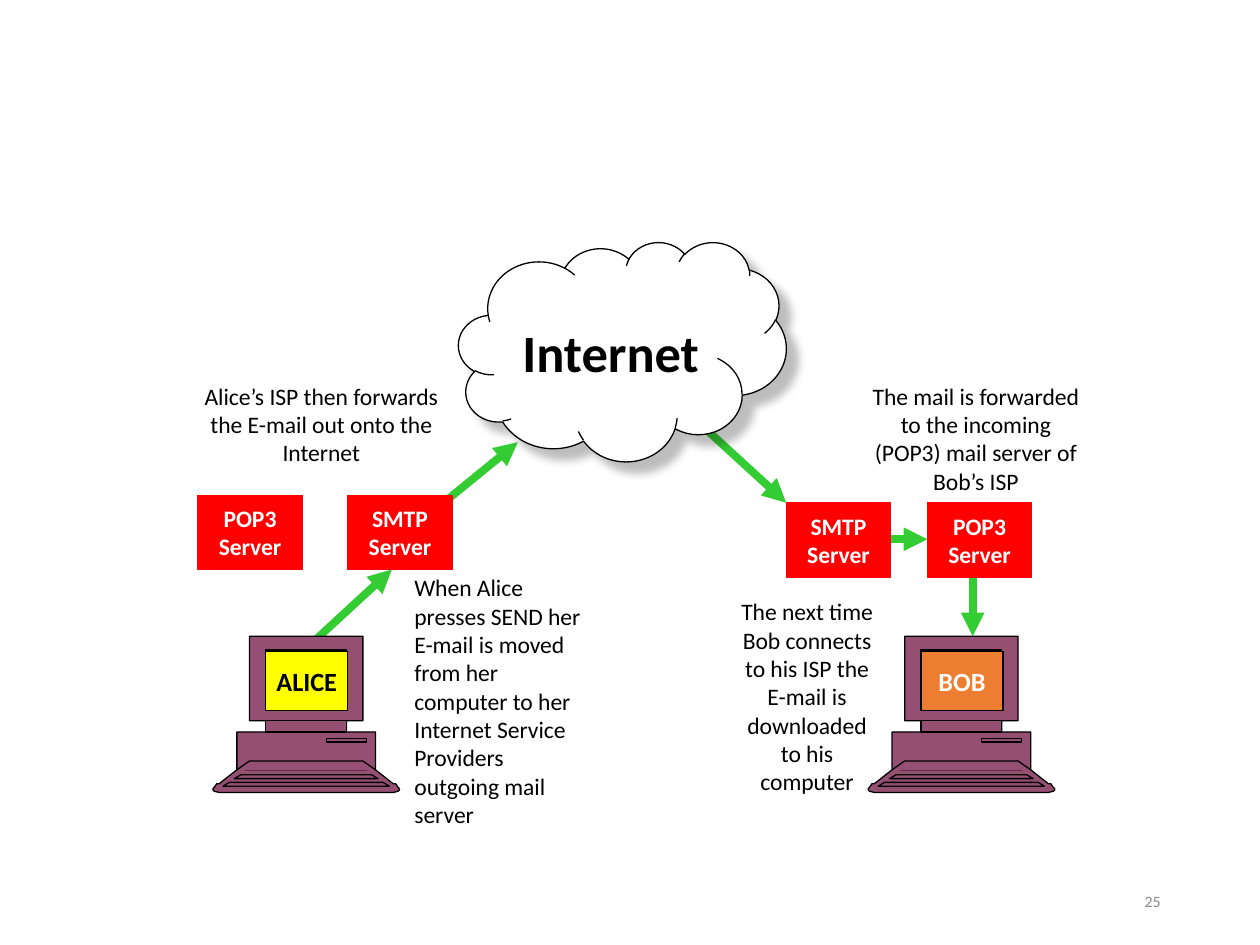
"""Draw how an e-mail travels from Alice to Bob through their mail servers."""
from dataclasses import dataclass
from typing import NamedTuple

from lxml.etree import SubElement
from pptx import Presentation
from pptx.dml.color import RGBColor
from pptx.enum.shapes import MSO_CONNECTOR, MSO_SHAPE
from pptx.enum.text import MSO_ANCHOR, PP_ALIGN
from pptx.oxml.ns import qn
from pptx.util import Inches, Pt

CELL = Inches(0.01)
COLUMNS, ROWS = 1000, 750
COMPUTER_WIDTH = 148


@dataclass(frozen=True)
class Theme:
    font: str = "Calibri"
    ink: str = "000000"
    paper: str = "FFFFFF"
    arrow: str = "33CC33"
    server: str = "FF0000"
    computer: str = "954F72"
    alice: str = "FFFF00"
    bob: str = "ED7D31"
    number: str = "898989"
    heading_size: float = 30
    name_size: float = 15
    body_size: float = 13.5
    number_size: float = 9
    outline: float = 0.75
    arrow_width: float = 4.5


THEME = Theme()


class Box(NamedTuple):
    left: int
    top: int
    width: int
    height: int


class Arrow(NamedTuple):
    start: tuple[int, int]
    end: tuple[int, int]


class Note(NamedTuple):
    box: Box
    text: str
    align: PP_ALIGN = PP_ALIGN.CENTER


class Server(NamedTuple):
    protocol: str
    left: int
    top: int


class Computer(NamedTuple):
    owner: str
    left: int
    screen: str
    ink: str


class Contour(NamedTuple):
    points: list[tuple[int, int]]
    closed: bool = True


def mirrored(*left_half: tuple[int, int]) -> list[tuple[int, int]]:
    return [*left_half, *((COMPUTER_WIDTH - x, y) for x, y in reversed(left_half))]


CONTOURS = [
    Contour(mirrored((29, 0), (29, 67), (42, 67), (42, 76), (19, 76), (19, 106), (5, 117),
                     (3, 117), (1, 120), (0, 121), (0, 122), (1, 123), (5, 124))),
    *(Contour(mirrored((bottom, row + 3), (top, row)))
      for top, bottom, row in [(30, 26, 103), (22, 17, 110), (13, 8, 116)]),
    Contour(mirrored((19, 106), (29, 99)), closed=False),
    Contour([(90, 81), (90, 84), (122, 84), (122, 81)]),
    Contour(mirrored((42, 11), (42, 56))),
    Contour(mirrored((42, 67), (42, 76))),
]

ARROWS = [
    Arrow((689, 428), (736, 428)),
    Arrow((234, 523), (311, 452)),
    Arrow((346, 404), (411, 351)),
    Arrow((553, 334), (624, 399)),
    Arrow((772, 452), (772, 505)),
]
SERVERS = [
    Server("POP3", 157, 393),
    Server("SMTP", 276, 393),
    Server("POP3", 736, 399),
    Server("SMTP", 624, 399),
]
COMPUTERS = [
    Computer("ALICE", 169, THEME.alice, THEME.ink),
    Computer("BOB", 689, THEME.bob, THEME.paper),
]
NOTES = [
    Note(Box(319, 450, 162, 215), "When Alice presses SEND her E-mail is moved from her computer "
         "to her Internet Service Providers outgoing mail server", PP_ALIGN.LEFT),
    Note(Box(140, 298, 230, 78), "Alice’s ISP then forwards the E-mail out onto the Internet"),
    Note(Box(681, 298, 187, 101), "The mail is forwarded to the incoming (POP3) mail server of Bob’s ISP"),
    Note(Box(575, 469, 131, 169), "The next time Bob connects to his ISP the E-mail is downloaded "
         "to his computer"),
]


def write(shape, lines: list[str], size: float, color: str, bold: bool = False,
          align: PP_ALIGN = PP_ALIGN.CENTER, anchor: MSO_ANCHOR = MSO_ANCHOR.MIDDLE,
          wrap: bool = False) -> None:
    frame = shape.text_frame
    frame.word_wrap = wrap
    frame.vertical_anchor = anchor
    for index, line in enumerate(lines):
        paragraph = frame.add_paragraph() if index else frame.paragraphs[0]
        paragraph.alignment = align
        run = paragraph.add_run()
        run.text = line
        run.font.name, run.font.size, run.font.bold = THEME.font, Pt(size), bold
        run.font.color.rgb = RGBColor.from_string(color)


def paint(shape, fill: str, line: str) -> None:
    shape.shadow.inherit = False
    shape.fill.solid()
    shape.fill.fore_color.rgb = RGBColor.from_string(fill)
    shape.line.color.rgb = RGBColor.from_string(line)
    shape.line.width = Pt(THEME.outline)


def add_preset(slide, kind: MSO_SHAPE, box: Box, fill: str, line: str):
    shape = slide.shapes.add_shape(kind, *(CELL * length for length in box))
    paint(shape, fill, line)
    return shape


def add_arrow(slide, arrow: Arrow) -> None:
    ends = (CELL * length for length in (*arrow.start, *arrow.end))
    connector = slide.shapes.add_connector(MSO_CONNECTOR.STRAIGHT, *ends)
    connector.line.color.rgb = RGBColor.from_string(THEME.arrow)
    connector.line.width = Pt(THEME.arrow_width)
    properties = connector.element.spPr
    SubElement(properties.find(qn("a:ln")), qn("a:tailEnd"), type="triangle")
    SubElement(properties, qn("a:effectLst"))


def add_cloud(slide, box: Box) -> None:
    cloud = add_preset(slide, MSO_SHAPE.CLOUD, box, THEME.paper, THEME.ink)
    effects = cloud.element.spPr.find(qn("a:effectLst"))
    shadow = SubElement(effects, qn("a:outerShdw"), blurRad=str(Pt(5)), dist=str(Pt(8.5)),
                        dir="2700000", algn="ctr", rotWithShape="0")
    color = SubElement(shadow, qn("a:srgbClr"), val=THEME.ink)
    SubElement(color, qn("a:alpha"), val="25000")
    cloud.text_frame.margin_top = Inches(0.36)
    write(cloud, ["Internet"], THEME.heading_size, THEME.ink, True,
          anchor=MSO_ANCHOR.TOP, wrap=True)


def add_computer(slide, computer: Computer, top: int) -> None:
    builder = slide.shapes.build_freeform(*CONTOURS[0].points[0], scale=CELL)
    for index, contour in enumerate(CONTOURS):
        if index:
            builder.move_to(*contour.points[0])
        builder.add_line_segments(contour.points[1:], close=contour.closed)
    shape = builder.convert_to_shape(CELL * computer.left, CELL * top)
    paint(shape, THEME.computer, THEME.ink)
    separate_contours(shape)


def separate_contours(shape) -> None:
    """Give every contour its own outline so that overlapping contours stay filled."""
    outline = next(shape.element.iter(qn("a:path")))
    current = outline
    for step in list(outline)[1:]:
        if step.tag == qn("a:moveTo"):
            current = SubElement(outline.getparent(), qn("a:path"), dict(outline.attrib))
        current.append(step)


def add_note(slide, note: Note, size: float, color: str, anchor: MSO_ANCHOR) -> None:
    textbox = slide.shapes.add_textbox(*(CELL * length for length in note.box))
    write(textbox, [note.text], size, color, align=note.align, anchor=anchor, wrap=True)


def main() -> None:
    presentation = Presentation()
    presentation.slide_width, presentation.slide_height = CELL * COLUMNS, CELL * ROWS
    slide = presentation.slides.add_slide(presentation.slide_layouts[6])
    for arrow in ARROWS:
        add_arrow(slide, arrow)
    add_cloud(slide, Box(364, 192, 260, 174))
    for computer in COMPUTERS:
        add_computer(slide, computer, 505)
    for server in SERVERS:
        shape = add_preset(slide, MSO_SHAPE.RECTANGLE, Box(server.left, server.top, 83, 59),
                           THEME.server, THEME.server)
        write(shape, [server.protocol, "Server"], THEME.body_size, THEME.paper, True)
    for note in NOTES:
        add_note(slide, note, THEME.body_size, THEME.ink, MSO_ANCHOR.TOP)
    for computer in COMPUTERS:
        screen = add_preset(slide, MSO_SHAPE.RECTANGLE, Box(computer.left + 42, 517, 65, 47),
                            computer.screen, THEME.ink)
        write(screen, [computer.owner], THEME.name_size, computer.ink, True)
    add_note(slide, Note(Box(706, 695, 225, 40), "25", PP_ALIGN.RIGHT),
             THEME.number_size, THEME.number, MSO_ANCHOR.MIDDLE)
    presentation.save("out.pptx")


if __name__ == "__main__":
    main()
